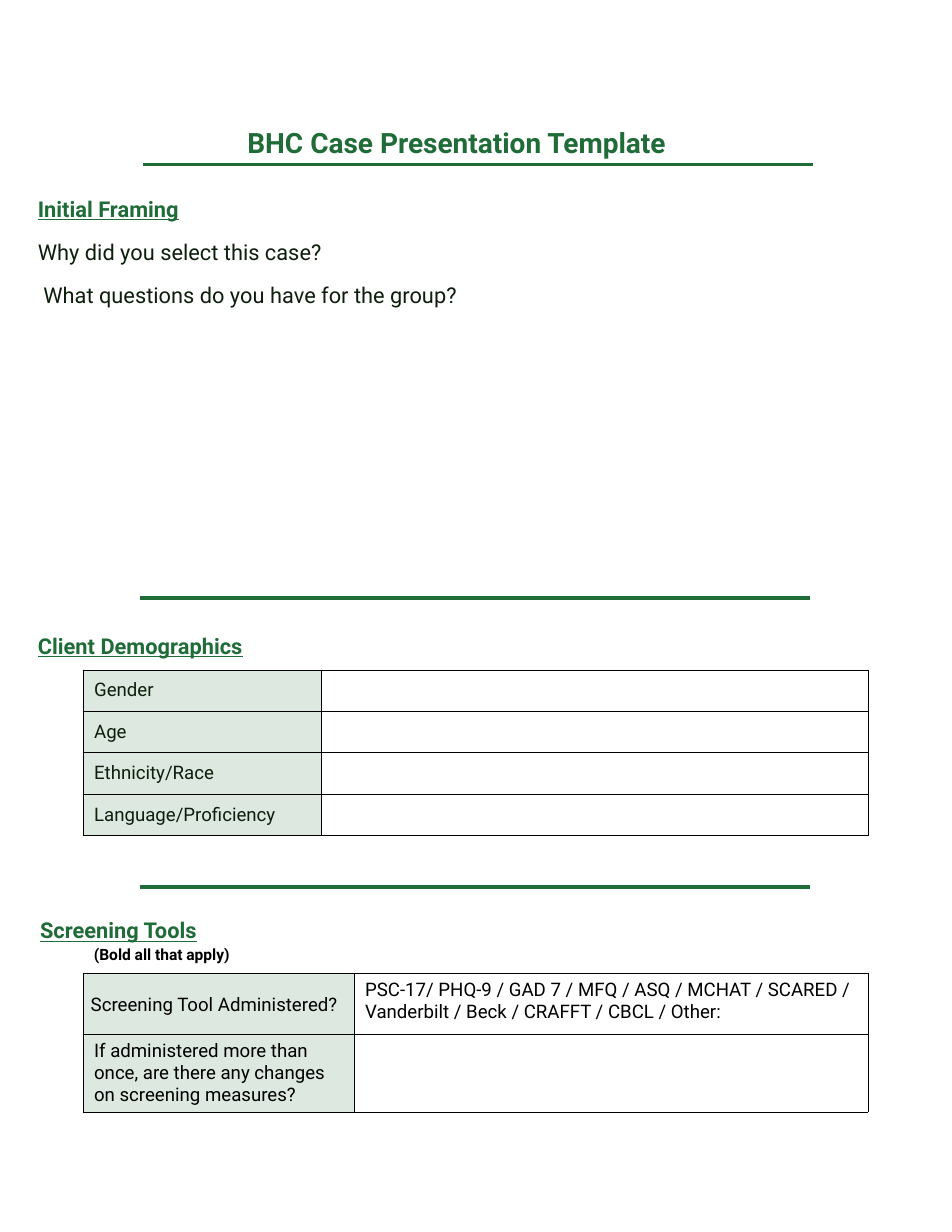
from lxml.etree import SubElement
from pptx import Presentation
from pptx.dml.color import RGBColor
from pptx.enum.shapes import MSO_CONNECTOR as Connector
from pptx.enum.text import MSO_ANCHOR as Anchor
from pptx.oxml.ns import qn
from pptx.util import Inches, Pt

GREEN = RGBColor(0x1F, 0x6C, 0x38)
INK = RGBColor(0x0D, 0x1F, 0x0C)
BLACK = RGBColor(0, 0, 0)
PALE_GREEN = RGBColor(0xDC, 0xE8, 0xE0)
WHITE = RGBColor(0xFF, 0xFF, 0xFF)
FONT = "Roboto"
HEADING = dict(size=14, color=GREEN, bold=True, underline=True, after=8)


def write(paragraph, text, size=12, color=BLACK, bold=False, underline=False,
          spacing=None, after=0):
    """Fill a paragraph with formatted text."""
    paragraph.line_spacing = spacing
    paragraph.space_after = Pt(after)
    if not text:
        SubElement(paragraph._p, qn("a:endParaRPr"), sz=str(size * 100))
        return
    run = paragraph.add_run()
    run.text = text
    font = run.font
    font.name, font.size, font.bold, font.underline = FONT, Pt(size), bold, underline
    font.color.rgb = color


def add_text(slide, left, top, width, height, lines, wrap=True):
    """Add a text box from (text, format) pairs."""
    box = slide.shapes.add_textbox(Inches(left), Inches(top), Inches(width), Inches(height))
    frame = box.text_frame
    frame.word_wrap = wrap
    for index, (text, style) in enumerate(lines):
        paragraph = frame.add_paragraph() if index else frame.paragraphs[0]
        write(paragraph, text, **style)


def add_divider(slide, left, top):
    """Draw a green horizontal rule."""
    rule = slide.shapes.add_connector(
        Connector.STRAIGHT, Inches(left), Inches(top), Inches(left + 5.98), Inches(top))
    rule.line.color.rgb = GREEN
    rule.line.width = Pt(2.25)
    SubElement(rule._element.spPr, qn("a:effectLst"))


def style_cell(cell, fill):
    """Give a cell thin black borders and a fill."""
    properties = cell._tc.get_or_add_tcPr()
    for side in ("a:lnL", "a:lnR", "a:lnT", "a:lnB"):
        border = SubElement(properties, qn(side), w=str(Pt(0.25)))
        SubElement(SubElement(border, qn("a:solidFill")), qn("a:srgbClr"), val=str(BLACK))
    cell.fill.solid()
    cell.fill.fore_color.rgb = fill


def add_form(slide, top, widths, heights, rows, color):
    """Add a two-column form table and return it."""
    form = slide.shapes.add_table(
        len(rows), len(widths), Inches(0.74), Inches(top),
        Inches(sum(widths)), Inches(sum(heights))).table
    form.first_row = form.horz_banding = False
    for column, width in zip(form.columns, widths):
        column.width = Inches(width)
    for row, height, texts in zip(form.rows, heights, rows):
        row.height = Inches(height)
        for cell, text, fill in zip(row.cells, texts, (PALE_GREEN, WHITE)):
            style_cell(cell, fill)
            write(cell.text_frame.paragraphs[0], text, color=color)
        row.cells[0].vertical_anchor = Anchor.MIDDLE
    return form


def main():
    """Build the case presentation template."""
    deck = Presentation()
    deck.slide_width, deck.slide_height = Inches(8.5), Inches(11)
    slide = deck.slides.add_slide(deck.slide_layouts[6])

    title = dict(size=18, color=GREEN, bold=True)
    add_text(slide, 2.11, 1.07, 3.99, 0.4,
             [("BHC Case Presentation Template", title)], wrap=False)
    for left, top in ((1.28, 1.47), (1.25, 5.34), (1.25, 7.92)):
        add_divider(slide, left, top)

    question = dict(size=14, color=INK, spacing=1.16, after=8)
    add_text(slide, 0.24, 1.7, 7.97, 1.11, [
        ("Initial Framing", HEADING),
        ("Why did you select this case?", question),
        (" What questions do you have for the group?", question)])
    add_text(slide, 0.24, 5.6, 7.97, 0.34, [("Client Demographics", HEADING)])
    add_text(slide, 0.26, 8.14, 7.97, 0.34, [("Screening Tools", HEADING)])
    hint = dict(size=10, bold=True, spacing=1.16, after=8)
    add_text(slide, 0.74, 8.36, 1.48, 0.3, [("(Bold all that apply)", hint)])

    traits = ("Gender", "Age", "Ethnicity/Race", "Language/Proficiency")
    add_form(slide, 5.98, (2.13, 4.88), [0.37] * len(traits),
             [(trait, "") for trait in traits], INK)
    screening = add_form(slide, 8.69, (2.42, 4.59), (0.54, 0.7), [
        ("Screening Tool Administered?",
         "PSC-17/ PHQ-9 / GAD 7 / MFQ / ASQ / MCHAT / SCARED / "
         "Vanderbilt / Beck / CRAFFT / CBCL / Other:"),
        ("If administered more than once, are there any changes on screening measures?", ""),
    ], BLACK)
    tool_label = screening.cell(0, 0)
    tool_label.margin_left = tool_label.margin_right = Inches(0.07)
    tool_label.margin_top = tool_label.margin_bottom = 0
    tool_label.text_frame.paragraphs[0].line_spacing = 1.16

    deck.save("out.pptx")


if __name__ == "__main__":
    main()
